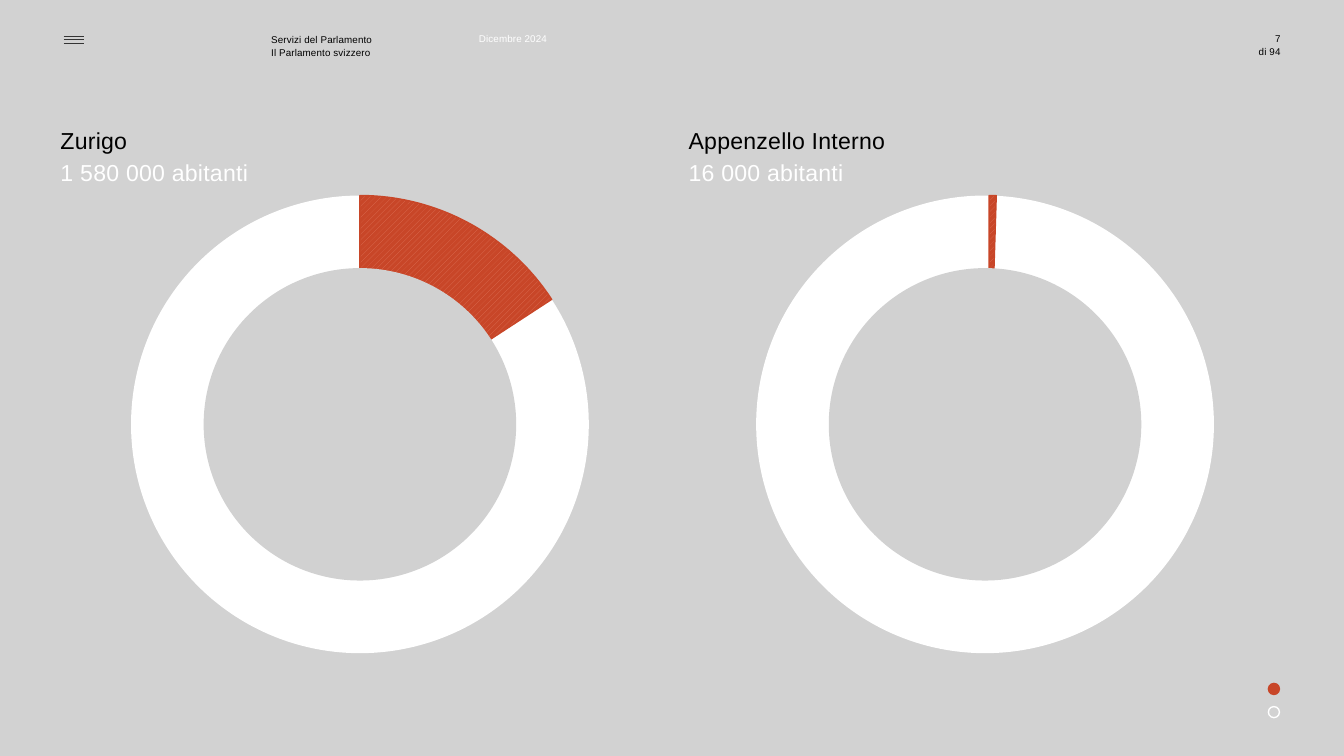
import math
from dataclasses import dataclass
from typing import Optional

import pptx
import pptx.dml.color
import pptx.enum.dml
import pptx.enum.shapes
import pptx.enum.text
import pptx.oxml.ns
import pptx.util
from lxml import etree

EMU_PER_PX = 9144  # 100 px to the inch
RGB = pptx.dml.color.RGBColor.from_string
ALIGN = pptx.enum.text.PP_ALIGN
SHAPE = pptx.enum.shapes.MSO_SHAPE


@dataclass(frozen=True)
class Theme:
    font: str = "Arial"
    background: str = "D2D2D2"
    ink: str = "000000"
    rule: str = "343434"
    white: str = "FFFFFF"
    hole: str = "D1D1D1"
    red: str = "C84628"
    hatch: str = "DD6F55"
    small: float = 7
    heading: float = 16.5


THEME = Theme()


@dataclass(frozen=True)
class Label:
    left: int
    top: int
    width: int
    height: int
    lines: tuple[tuple[str, str], ...]  # wording and colour
    size: float = THEME.small
    tracking: int = 10  # hundredths of a point
    spacing: float = 1.0
    align: ALIGN = ALIGN.LEFT


@dataclass(frozen=True)
class Canton:
    name: str
    inhabitants: str
    label_left: int
    center_x: int
    wedge_x: int
    degrees: float


@dataclass(frozen=True)
class Dot:
    top: int
    fill: Optional[str]
    line: str


LABELS = (
    Label(1226, 45, 44, 12, (("di 94", THEME.ink),), align=ALIGN.RIGHT),
    Label(269, 32, 130, 25, (("Servizi del Parlamento", THEME.ink),
                             ("Il Parlamento svizzero", THEME.ink)), spacing=1.1),
    Label(475, 32, 121, 12, (("Dicembre 2024", THEME.white),)),
    Label(1226, 32, 44, 12, (("7", THEME.ink),), align=ALIGN.RIGHT),
)
CANTONS = (
    Canton("Zurigo", "1 580 000 abitanti", 60, 357, 357, 56.9),
    Canton("Appenzello Interno", "16 000 abitanti", 683, 977, 981, 1.8),
)
DOTS = (Dot(701, None, THEME.white), Dot(678, THEME.red, THEME.red))
MENU_TOPS = (36, 39, 43)
RING_Y, RING_RADIUS, HOLE_RADIUS = 421, 227, 155


def px(length: float) -> int:
    return round(length * EMU_PER_PX)


def add_label(slide, label: Label) -> None:
    box = slide.shapes.add_textbox(
        px(label.left), px(label.top), px(label.width), px(label.height))
    frame_format = {"margin_left": 0, "margin_top": 0, "margin_right": 0,
                    "margin_bottom": 0, "word_wrap": True}
    for name, value in frame_format.items():
        setattr(box.text_frame, name, value)
    for index, (wording, color) in enumerate(label.lines):
        line = box.text_frame.add_paragraph() if index else box.text_frame.paragraphs[0]
        line.alignment = label.align
        line.line_spacing = label.spacing
        run = line.add_run()
        run.text = wording
        font_format = {"name": THEME.font, "size": pptx.util.Pt(label.size)}
        for name, value in font_format.items():
            setattr(run.font, name, value)
        run.font.color.rgb = RGB(color)
        run._r.get_or_add_rPr().set("spc", str(label.tracking))


def paint(shape, fill: Optional[str], line: Optional[str]) -> None:
    shape.shadow.inherit = False
    for part, color in ((shape.fill, fill), (shape.line.fill, line)):
        if color is None:
            part.background()
        else:
            part.solid()
            part.fore_color.rgb = RGB(color)
    if line:
        shape.line.width = pptx.util.Pt(1)


def add_disc(slide, center_x: int, radius: int, color: str) -> None:
    disc = slide.shapes.add_shape(
        SHAPE.OVAL, px(center_x - radius), px(RING_Y - radius),
        px(2 * radius), px(2 * radius))
    paint(disc, color, None)


def add_wedge(slide, apex_x: int, degrees: float) -> None:
    steps = max(2, math.ceil(degrees))
    angles = [math.radians(degrees * step / steps) for step in range(steps + 1)]
    arc = [(px(apex_x + RING_RADIUS * math.sin(angle)),
            px(RING_Y - RING_RADIUS * math.cos(angle))) for angle in angles]
    builder = slide.shapes.build_freeform(px(apex_x), px(RING_Y))
    builder.add_line_segments(arc, close=True)
    wedge = builder.convert_to_shape()
    paint(wedge, None, THEME.red)
    wedge.fill.patterned()
    wedge.fill.pattern = pptx.enum.dml.MSO_PATTERN.WIDE_UPWARD_DIAGONAL
    wedge.fill.fore_color.rgb = RGB(THEME.hatch)
    wedge.fill.back_color.rgb = RGB(THEME.red)


def add_canton(slide, canton: Canton) -> None:
    add_label(slide, Label(
        canton.label_left, 122, 559, 96,
        ((canton.name, THEME.ink), (canton.inhabitants, THEME.white)),
        size=THEME.heading, tracking=20, spacing=1.14))
    add_disc(slide, canton.center_x, RING_RADIUS, THEME.white)
    add_wedge(slide, canton.wedge_x, canton.degrees)
    add_disc(slide, canton.center_x, HOLE_RADIUS, THEME.hole)


def add_menu_line(slide, top: int) -> None:
    rule = slide.shapes.add_connector(
        pptx.enum.shapes.MSO_CONNECTOR.STRAIGHT, px(63), px(top), px(83), px(top))
    rule.line.color.rgb = RGB(THEME.rule)
    rule.line.width = pptx.util.Pt(0.4)
    etree.SubElement(rule._element.spPr, pptx.oxml.ns.qn("a:effectLst"))


def add_dot(slide, dot: Dot) -> None:
    shape = slide.shapes.add_shape(SHAPE.OVAL, px(1258), px(dot.top), px(11), px(11))
    paint(shape, dot.fill, dot.line)


def main() -> None:
    deck = pptx.Presentation()
    deck.slide_width, deck.slide_height = px(1333), px(750)
    slide = deck.slides.add_slide(deck.slide_layouts[6])
    slide.background.fill.solid()
    slide.background.fill.fore_color.rgb = RGB(THEME.background)

    # Header
    for label in LABELS:
        add_label(slide, label)
    for top in MENU_TOPS:
        add_menu_line(slide, top)

    # Cantons with their rings
    for canton in CANTONS:
        add_canton(slide, canton)

    # Page dots
    for dot in DOTS:
        add_dot(slide, dot)

    deck.save("out.pptx")


if __name__ == "__main__":
    main()
